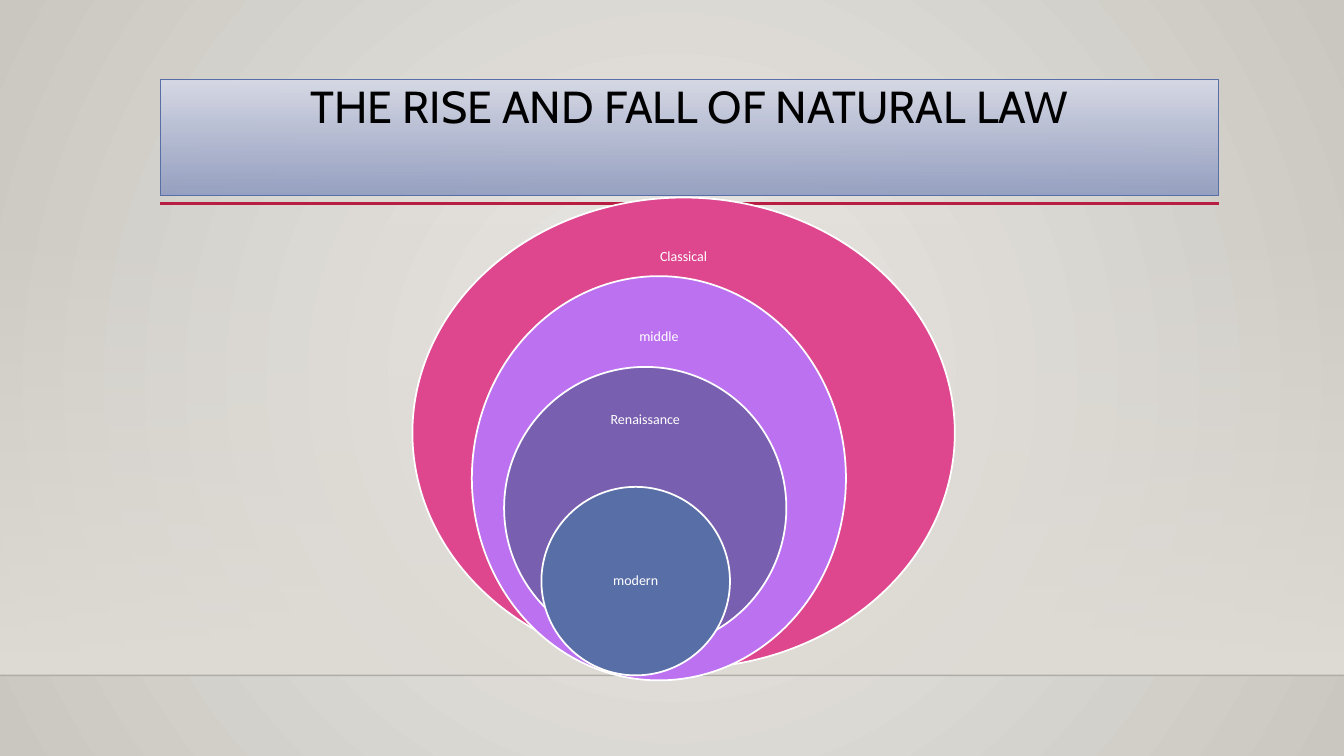
import pptx
import pptx.util
import pptx.dml.color
import pptx.enum.shapes
import pptx.enum.text
import pptx.oxml.ns
import lxml.etree

RGB = pptx.dml.color.RGBColor
PALE = RGB(0xEC, 0xEA, 0xE7)
STONE = RGB(0xCA, 0xC7, 0xC1)
SAND = RGB(0xDF, 0xDB, 0xD5)
INK = RGB(0x00, 0x00, 0x01)
BLACK = RGB(0x00, 0x00, 0x00)
WHITE = RGB(0xFF, 0xFF, 0xFF)
RED = RGB(0xB7, 0x1E, 0x42)
MIST = RGB(0xD6, 0xD9, 0xE5)
STEEL = RGB(0x92, 0x9D, 0xC0)
BLUE = RGB(0x58, 0x6E, 0xA6)
PINK = RGB(0xDE, 0x47, 0x8E)
LILAC = RGB(0xBC, 0x72, 0xF0)
PURPLE = RGB(0x79, 0x5F, 0xAF)

SHAPE = pptx.enum.shapes.MSO_SHAPE
ANCHOR = pptx.enum.text.MSO_ANCHOR
IN = pptx.util.Inches
PT = pptx.util.Pt
WIDTH, HEIGHT = 13.33, 7.5
TITLE_BOX = (1.59, 0.79, 10.5, 1.15)
FLOOR_BOX = (0, 2.21, WIDTH, 4.49)
DIAGRAM_BOX = (4.09, 1.96, 5.38, 4.79)

# name, fill, circle (x, y, w, h), label (middle y, w, h), percent of the diagram box
ERAS = [
    ("Classical", PINK, (0, 0, 100, 97.49), (12.32, 19.7, 10.44)),
    ("middle", LILAC, (10.97, 16.28, 68.96, 83.72), (28.91, 17.1, 10.65)),
    ("Renaissance", PURPLE, (16.91, 35.07, 52.04, 58.46), (46.03, 17.1, 9.39)),
    ("modern", BLUE, (23.79, 59.92, 34.76, 39.04), (79.33, 17.29, 13.78)),
]


def sub(parent, tag, **attrs):
    return lxml.etree.SubElement(parent, pptx.oxml.ns.qn(tag), attrs)


def set_alpha(fill, percent):
    for clr in fill.iter(pptx.oxml.ns.qn("a:srgbClr")):
        sub(clr, "a:alpha", val=str(percent * 1000))


def set_gradient(fill, *colors):
    fill.gradient()
    for stop, color in zip(fill.gradient_stops, colors):
        stop.color.rgb = color


def share(box, x, y, w, h):
    left, top, width, height = box
    return (left + width * x / 100, top + height * y / 100,
            width * w / 100, height * h / 100)


def add_shape(shapes, kind, box):
    sp = shapes.add_shape(kind, *map(IN, box))
    sp.shadow.inherit = False
    return sp


def add_line(s, x1, x2, y, color, width):
    line = s.shapes.add_connector(pptx.enum.shapes.MSO_CONNECTOR.STRAIGHT,
                                  IN(x1), IN(y), IN(x2), IN(y))
    line.line.color.rgb = color
    line.line.width = PT(width)
    sub(line._element.spPr, "a:effectLst")
    return line


def write(tf, text, frame, font, color, space_after=0):
    for key, value in frame.items():
        setattr(tf, key, value)
    p = tf.paragraphs[0]
    paragraph = {"alignment": pptx.enum.text.PP_ALIGN.CENTER,
                 "line_spacing": 0.9, "space_after": PT(space_after)}
    for key, value in paragraph.items():
        setattr(p, key, value)
    r = p.add_run()
    r.text = text
    for key, value in font.items():
        setattr(r.font, key, value)
    r.font.color.rgb = color


def add_backdrop(s, box):
    fill = s.background.fill
    set_gradient(fill, PALE, STONE)
    grad = s._element.find(".//" + pptx.oxml.ns.qn("a:gradFill"))
    grad.remove(grad.find(pptx.oxml.ns.qn("a:lin")))
    radial = sub(grad, "a:path", path="circle")
    sub(radial, "a:fillToRect", l="50000", t="50000", r="50000", b="50000")

    left, top, width, height = box
    floor = add_shape(s.shapes, SHAPE.RECTANGLE, box)
    set_gradient(floor.fill, SAND, SAND)
    floor.fill.gradient_angle = 270
    floor.line.fill.background()
    set_alpha(next(floor._element.iter(pptx.oxml.ns.qn("a:gs"))), 0)
    edge = add_line(s, left, left + width, top + height, INK, 1)
    set_alpha(edge._element.spPr, 20)


def add_title(s, box, text):
    left, top, width, height = box
    add_line(s, left, left + width, top + height + 0.08, RED, 2.5)
    sp = add_shape(s.shapes, SHAPE.RECTANGLE, box)
    set_gradient(sp.fill, MIST, STEEL)
    sp.fill.gradient_angle = 270
    set_alpha(list(sp._element.iter(pptx.oxml.ns.qn("a:gs")))[-1], 92)
    sp.line.color.rgb = BLUE
    sp.line.width = PT(0.75)
    write(sp.text_frame, text,
          {"word_wrap": True, "vertical_anchor": ANCHOR.TOP},
          {"name": "Cabin", "size": PT(32)}, BLACK)


def add_nested_circles(s, box, eras):
    group = s.shapes.add_group_shape()
    margins = dict.fromkeys(
        ("margin_left", "margin_top", "margin_right", "margin_bottom"), IN(0.08))
    frame = {"word_wrap": True, "vertical_anchor": ANCHOR.MIDDLE, **margins}
    for name, color, circle, (middle, w, h) in eras:
        sp = add_shape(group.shapes, SHAPE.OVAL, share(box, *circle))
        sp.fill.solid()
        sp.fill.fore_color.rgb = color
        sp.line.color.rgb = WHITE
        sp.line.width = PT(1.25)
        center = circle[0] + circle[2] / 2
        label_box = share(box, center - w / 2, middle - h / 2, w, h)
        label = group.shapes.add_textbox(*map(IN, label_box))
        write(label.text_frame, name, frame,
              {"name": "Calibri", "size": PT(10)}, WHITE, 3.5)


def main():
    prs = pptx.Presentation()
    prs.slide_width, prs.slide_height = IN(WIDTH), IN(HEIGHT)
    s = prs.slides.add_slide(prs.slide_layouts[6])
    add_backdrop(s, FLOOR_BOX)
    add_title(s, TITLE_BOX, "THE RISE AND FALL OF NATURAL LAW")
    add_nested_circles(s, DIAGRAM_BOX, ERAS)
    prs.save("out.pptx")


if __name__ == "__main__":
    main()
